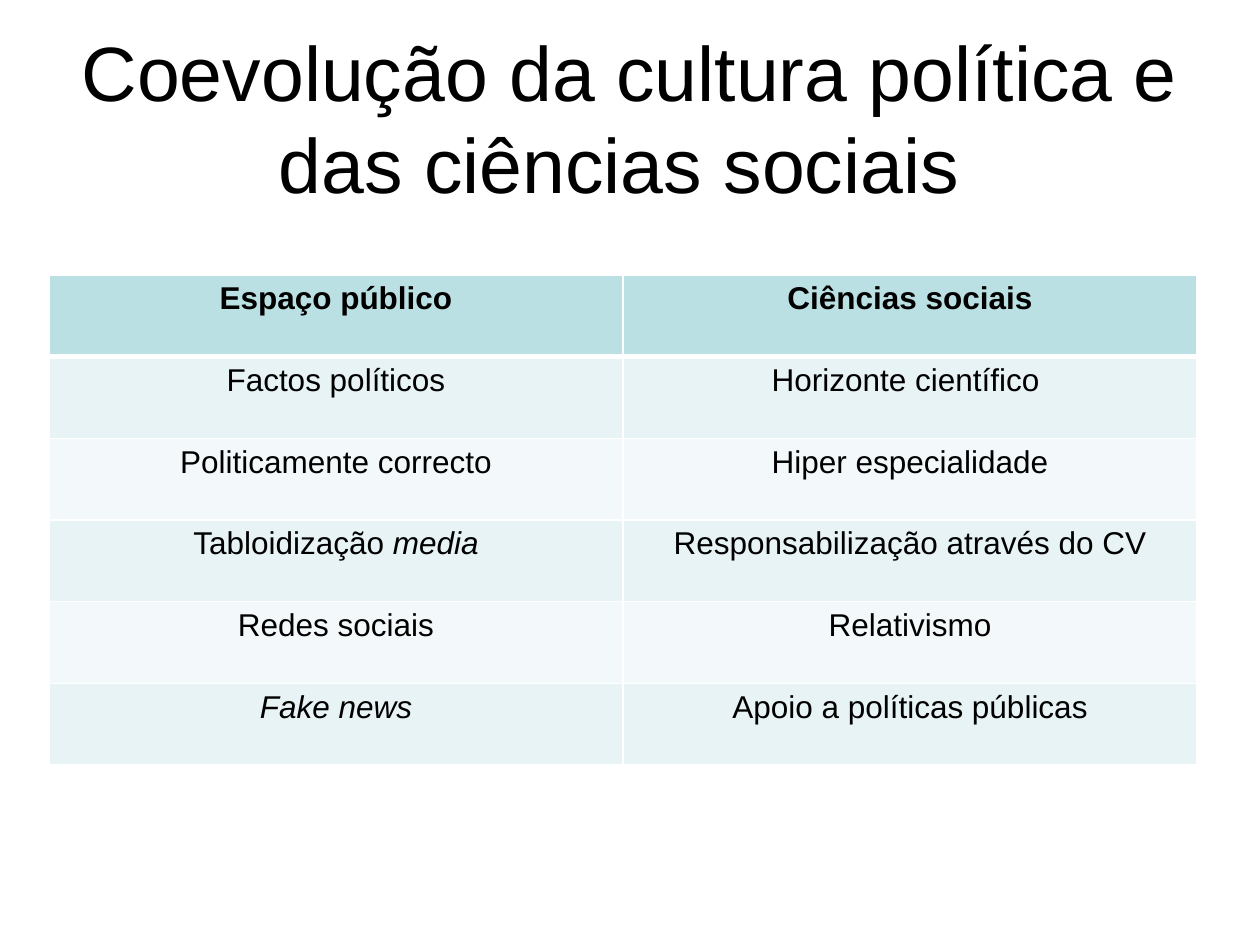
from lxml import etree
from pptx import Presentation
from pptx.dml.color import RGBColor
from pptx.enum.text import MSO_ANCHOR, PP_ALIGN
from pptx.oxml.ns import qn
from pptx.util import Emu, Pt

CENTER = PP_ALIGN.CENTER
MIDDLE = MSO_ANCHOR.MIDDLE
FONT = "Arial"
BLACK, WHITE = "000000", "FFFFFF"
HEADER_FILL = "BBE0E3"
BAND_FILLS = ("E7F3F4", "F3F9FA")

TITLE = "Coevolução da cultura política e das ciências sociais "
# Each cell is a list of (text, italic) runs
ROWS = [
    ([("Espaço público", False)], [("Ciências sociais", False)]),
    ([("Factos políticos", False)], [("Horizonte científico ", False)]),
    ([("Politicamente correcto", False)], [("Hiper especialidade", False)]),
    ([("Tabloidização ", False), ("media", True)],
     [("Responsabilização através do CV", False)]),
    ([("Redes sociais", False)], [("Relativismo", False)]),
    ([("Fake news", True)], [("Apoio a políticas públicas", False)]),
]


def px(n):
    return Emu(round(n * 914400 / 126))


def color(value):
    return RGBColor.from_string(value)


def style_paragraph(p, size, bold=False):
    p.alignment = CENTER
    p.font.name = FONT
    p.font.size = Pt(size)
    p.font.bold = bold
    p.font.color.rgb = color(BLACK)


def add_title(s, text, x, y, w, h):
    tf = s.shapes.add_textbox(px(x), px(y), px(w), px(h)).text_frame
    tf.word_wrap = True
    tf.vertical_anchor = MIDDLE
    p = tf.paragraphs[0]
    p.text = text
    style_paragraph(p, 44)


def set_borders(cell, top, bottom):
    tc_pr = cell._tc.get_or_add_tcPr()
    for side, width in (("L", 1), ("R", 1), ("T", top), ("B", bottom)):
        ln = etree.SubElement(tc_pr, qn(f"a:ln{side}"), w=str(Pt(width)))
        fill = etree.SubElement(ln, qn("a:solidFill"))
        etree.SubElement(fill, qn("a:srgbClr"), val=WHITE)


def fill_cell(cell, runs, row):
    # The rule under the header is thicker than the others
    set_borders(cell, 3 if row == 1 else 1, 3 if row == 0 else 1)
    cell.fill.solid()
    cell.fill.fore_color.rgb = color(
        BAND_FILLS[(row - 1) % 2] if row else HEADER_FILL)
    p = cell.text_frame.paragraphs[0]
    for text, italic in runs:
        r = p.add_run()
        r.text = text
        if italic:
            r.font.italic = True
    style_paragraph(p, 18, bold=row == 0)


def add_comparison(s, rows, x, y, w, h):
    table = s.shapes.add_table(len(rows), len(rows[0]),
                               px(x), px(y), px(w), px(h)).table
    for i, row in enumerate(rows):
        for j, runs in enumerate(row):
            fill_cell(table.cell(i, j), runs, i)


def main():
    prs = Presentation()
    prs.slide_width, prs.slide_height = px(1260), px(945)
    s = prs.slides.add_slide(prs.slide_layouts[6])
    s.background.fill.solid()
    s.background.fill.fore_color.rgb = color(WHITE)

    # Title
    add_title(s, TITLE, 63, 38, 1134, 157)
    # Public space against social sciences
    add_comparison(s, ROWS, 49, 275, 1148, 490)

    prs.save("out.pptx")


if __name__ == "__main__":
    main()
